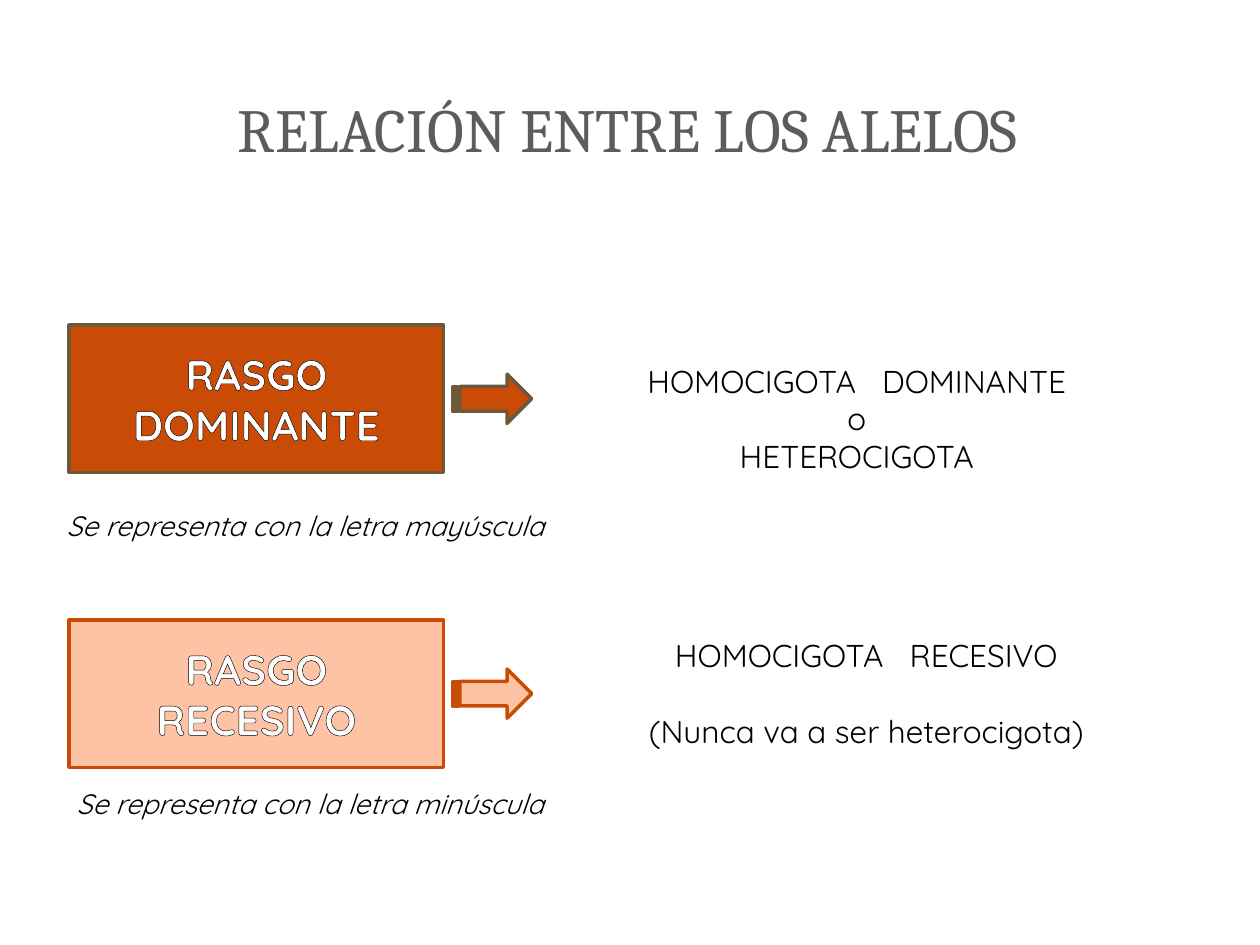
from dataclasses import dataclass

from lxml import etree
from pptx import Presentation
from pptx.dml.color import RGBColor
from pptx.enum.shapes import MSO_SHAPE
from pptx.enum.text import MSO_ANCHOR, PP_ALIGN
from pptx.oxml.ns import qn
from pptx.util import Inches, Pt

BOX, ARROW = MSO_SHAPE.RECTANGLE, MSO_SHAPE.STRIPED_RIGHT_ARROW
LEFT, CENTER = PP_ALIGN.LEFT, PP_ALIGN.CENTER
TOP, MIDDLE = MSO_ANCHOR.TOP, MSO_ANCHOR.MIDDLE
WIDE, HIGH = 10, 7.5
COLS, ROWS = 100, 75


@dataclass(frozen=True)
class Theme:
    serif: str = "Cambria"
    sans: str = "Quicksand"
    title: int = 35
    trait: int = 24
    body: int = 18
    note: int = 16
    gap: int = 22
    wide: int = 10
    edge: int = 2
    gray: str = "5B5C5E"
    ink: str = "000000"
    white: str = "FFFFFF"
    rust: str = "CA4B05"
    brown: str = "6D593A"
    peach: str = "FDC3A4"


THEME = Theme()


def place(col, row, cols, rows):
    """Turn grid columns and rows into lengths on the slide."""
    return (Inches(col * WIDE / COLS), Inches(row * HIGH / ROWS),
            Inches(cols * WIDE / COLS), Inches(rows * HIGH / ROWS))


def color(code):
    return RGBColor.from_string(code)


def add_run(para, text, size, ink=THEME.ink, face=THEME.sans, bold=False, slant=False):
    run = para.add_run()
    run.text = text
    font = run.font
    font.name, font.size = face, Pt(size)
    font.bold, font.italic = bold, slant
    font.color.rgb = color(ink)
    return run


def outline(run):
    """Draw a thin dark edge around the letters."""
    props = run.font._element
    line = etree.Element(qn("a:ln"), w=str(Pt(0.25)))
    fill = etree.SubElement(line, qn("a:solidFill"))
    etree.SubElement(fill, qn("a:srgbClr"), val=THEME.ink)
    props.insert(0, line)


def add_text(slide, area, lines, size, align=CENTER, anchor=TOP, **style):
    """Add a text box; each line is a list of words set wide apart, or None for a gap."""
    frame = slide.shapes.add_textbox(*place(*area)).text_frame
    frame.word_wrap = True
    frame.vertical_anchor = anchor
    para, gap = frame.paragraphs[0], 0
    for index, words in enumerate(lines):
        if words is None:
            gap = THEME.gap
            continue
        if index:
            para = frame.add_paragraph()
        para.alignment = align
        para.space_before = Pt(gap)
        gap = 0
        for spot, word in enumerate(words):
            if spot:
                space = add_run(para, " ", size, **style)
                space.font._element.set("spc", str(THEME.wide * 100))
            add_run(para, word, size, **style)


def add_block(slide, kind, area, fill, edge):
    shape = slide.shapes.add_shape(kind, *place(*area))
    shape.shadow.inherit = False
    shape.fill.solid()
    shape.fill.fore_color.rgb = color(fill)
    shape.line.color.rgb = color(edge)
    shape.line.width = Pt(THEME.edge)
    return shape


def add_trait(slide, row, name, fill, edge):
    box = add_block(slide, BOX, (5.5, row, 29.7, 11.7), fill, edge)
    frame = box.text_frame
    frame.word_wrap = True
    frame.vertical_anchor = MIDDLE
    para = frame.paragraphs[0]
    para.alignment = CENTER
    outline(add_run(para, name, THEME.trait, THEME.white, bold=True))
    add_block(slide, ARROW, (35.9, row + 3.9, 6.3, 3.9), fill, edge)


def add_note(slide, col, row, text):
    add_text(slide, (col, row, 51.2, 3.7), [[text]], THEME.note, LEFT, slant=True)


def main():
    deck = Presentation()
    deck.slide_width, deck.slide_height = Inches(WIDE), Inches(HIGH)
    slide = deck.slides.add_slide(deck.slide_layouts[6])

    add_text(slide, (4.7, 4.5, 90.3, 11.4), [["RELACIÓN ENTRE LOS ALELOS"]],
             THEME.title, anchor=MIDDLE, ink=THEME.gray, face=THEME.serif)

    add_trait(slide, 25.8, "RASGO DOMINANTE", THEME.rust, THEME.brown)
    add_text(slide, (42.2, 28.2, 51.6, 10.1),
             [["HOMOCIGOTA", "DOMINANTE"], ["o"], ["HETEROCIGOTA"]], THEME.body)
    add_note(slide, 4.3, 39.9, "Se representa con la letra mayúscula")

    add_trait(slide, 49.2, "RASGO RECESIVO", THEME.peach, THEME.rust)
    add_text(slide, (42.2, 50, 53.1, 10.1),
             [["HOMOCIGOTA", "RECESIVO"], None, ["(Nunca va a ser heterocigota)"]],
             THEME.body)
    add_note(slide, 5.1, 61.9, "Se representa con la letra minúscula")

    deck.save("out.pptx")


if __name__ == "__main__":
    main()
